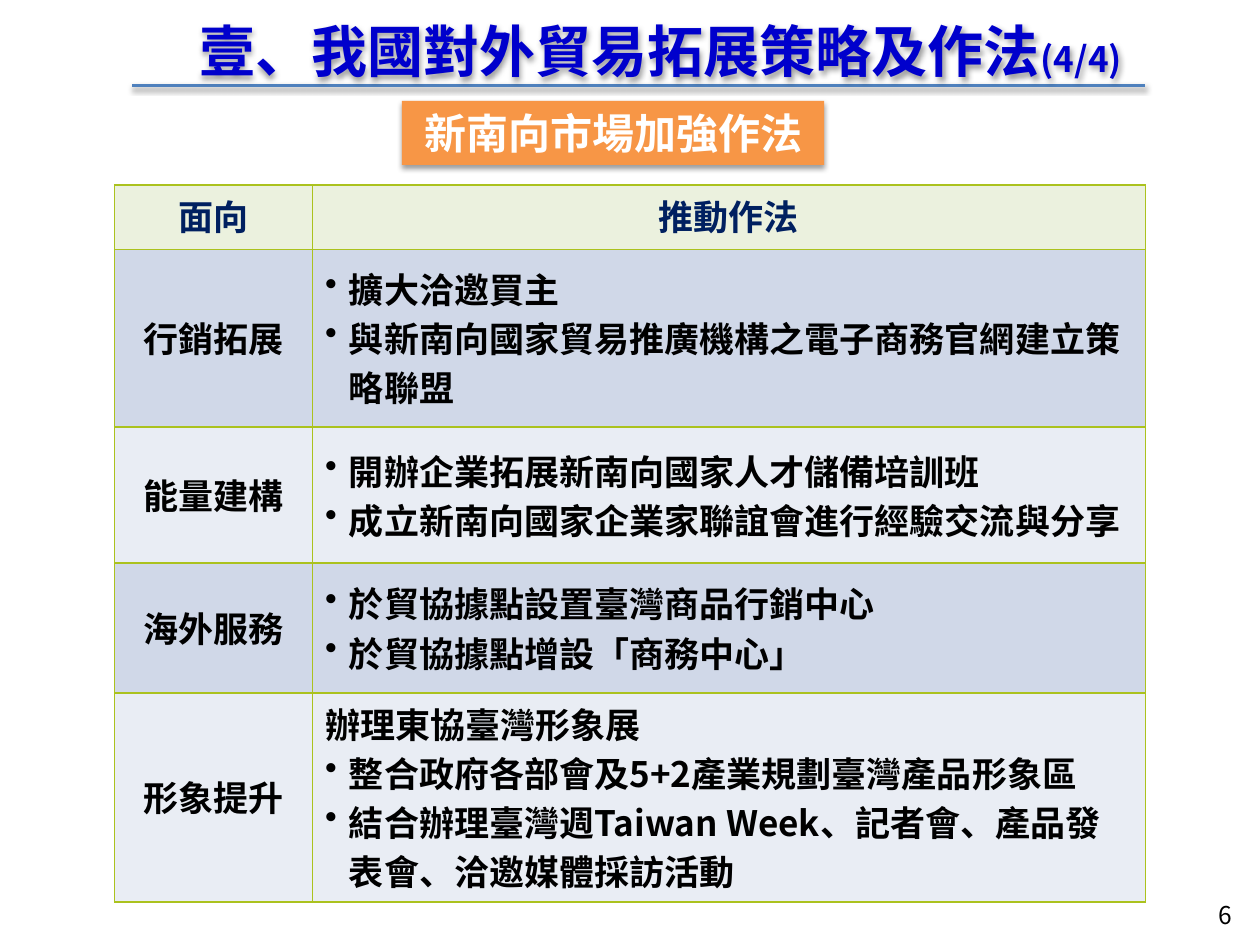
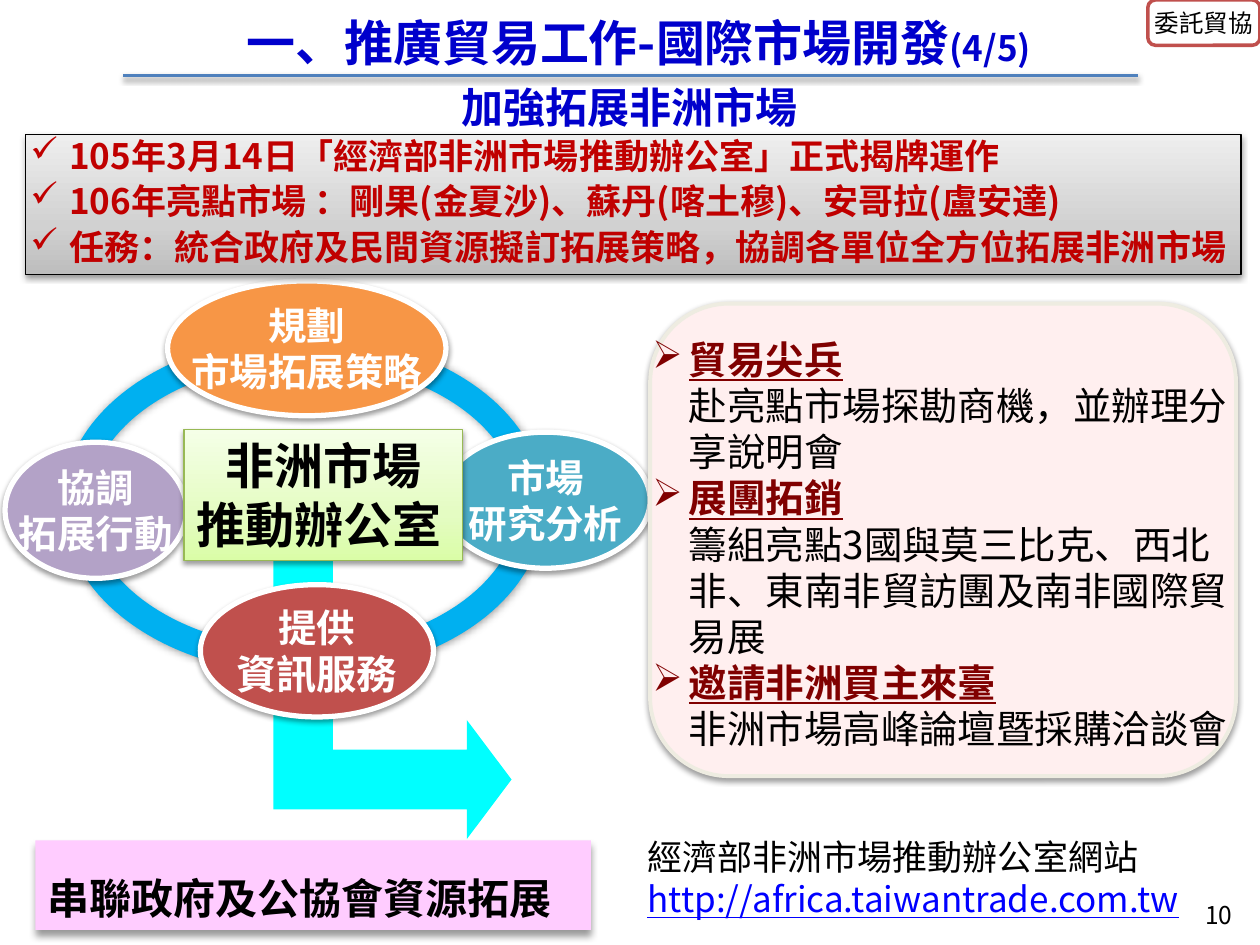
from lxml import etree
from pptx import Presentation
from pptx.dml.color import RGBColor
from pptx.enum import shapes, text
from pptx.oxml import parse_xml
from pptx.oxml.ns import nsdecls, qn
from pptx.util import Inches, Pt

FONT = "Noto Sans CJK SC"
C = dict(
    black="000000", white="FFFFFF", title="0000CC", rule="4F81BD", orange="F79646",
    teal="4BACC6", purple="B3A2C7", red="C0504D", ring="00B0F0", cyan="00FFFF",
    navy="002060", grid="ABC21E", head="EBF1DE", band="D0D8E8", band_light="E9EDF4",
    crimson="C00000", maroon="800000", blush="FFEFEF", cream="EEECE1", pink="FFCCFF",
    green_line="98B955", link="0000FF",
)
GREEN_FADE = [(0, "DAFDA7"), (35, "E4FCC2"), (100, "F5FFE7")]
GREY_FADE = [(0, "BDBDBD"), (35, "D1D1D1"), (100, "EEEEEE")]
# opacity %, blur pt, distance pt
SOFT = (38, 3.1, 1.6)
RULE_SHADOW = (35, 3.1, 1.8)
GLOW = (40, 5, 0)
DEEP = (40, 4, 3)
MS, AL, AN = shapes.MSO_SHAPE, text.PP_ALIGN, text.MSO_ANCHOR


def rgb(name):
    return RGBColor.from_string(C[name])


# ---- shared drawing helpers ----
def set_shadow(spPr, shadow):
    """Give a shape or connector a downward shadow, or none at all."""
    effects = spPr.find(qn("a:effectLst"))
    if effects is None:
        effects = etree.SubElement(spPr, qn("a:effectLst"))
    if shadow:
        alpha, blur, dist = shadow
        effects.append(parse_xml(
            f'<a:outerShdw {nsdecls("a")} blurRad="{Pt(blur)}" dist="{Pt(dist)}" '
            f'dir="5400000" rotWithShape="0"><a:srgbClr val="000000">'
            f'<a:alpha val="{alpha * 1000}"/></a:srgbClr></a:outerShdw>'))


def set_gradient(sp, stops):
    """Fade from the bottom edge to the top edge."""
    marks = "".join(f'<a:gs pos="{pos * 1000}"><a:srgbClr val="{c}"/></a:gs>'
                    for pos, c in stops)
    sp._element.spPr.find(qn("a:prstGeom")).addnext(parse_xml(
        f'<a:gradFill {nsdecls("a")} rotWithShape="1"><a:gsLst>{marks}</a:gsLst>'
        f'<a:lin ang="16200000" scaled="0"/></a:gradFill>'))


def add_box(slide, kind, box, fill=None, line=None, width=1, shadow=None):
    sp = slide.shapes.add_shape(kind, *map(Inches, box))
    sp.shadow.inherit = False
    set_shadow(sp._element.spPr, shadow)
    if isinstance(fill, list):
        set_gradient(sp, fill)
    elif fill:
        sp.fill.solid()
        sp.fill.fore_color.rgb = rgb(fill)
    else:
        sp.fill.background()
    if line:
        sp.line.color.rgb = rgb(line)
        sp.line.width = Pt(width)
    else:
        sp.line.fill.background()
    return sp


def set_frame(tf, anchor=AN.TOP, wrap=True):
    tf.vertical_anchor, tf.word_wrap = anchor, wrap
    return tf


def add_label(slide, box):
    return set_frame(slide.shapes.add_textbox(*map(Inches, box)).text_frame)


def write(tf, words, size=20, color="black", bold=False, underline=False, align=AL.LEFT,
          spacing=None, after=None, bullet=None, indent=0, hang=True):
    """Add one paragraph; words is a string or a list of (string, overrides)."""
    p = tf.paragraphs[0]
    if p.runs:
        p = tf.add_paragraph()
    p.alignment = align
    if spacing:
        p.line_spacing = spacing
    if after:
        p.space_after = Pt(after)
    pPr = p._p.get_or_add_pPr()
    if indent:
        pPr.set("marL", str(Inches(indent)))
        pPr.set("indent", str(-Inches(indent) if hang else 0))
    if bullet:
        etree.SubElement(pPr, qn("a:buChar")).set("char", bullet)
    for piece, own in ([(words, {})] if isinstance(words, str) else words):
        style = dict(size=size, color=color, underline=underline) | own
        r = p.add_run()
        r.text = piece
        r.font.size, r.font.bold = Pt(style["size"]), bold
        r.font.underline = style["underline"]
        r.font.color.rgb = rgb(style["color"])
        r.font.name = FONT
        etree.SubElement(r._r.get_or_add_rPr(), qn("a:ea")).set("typeface", FONT)


def add_rule(slide, x, y, w):
    ln = slide.shapes.add_connector(shapes.MSO_CONNECTOR.STRAIGHT,
                                    *map(Inches, (x, y, x + w, y)))
    ln.line.color.rgb = rgb("rule")
    ln.line.width = Pt(1.75)
    set_shadow(ln._element.spPr, RULE_SHADOW)


def write_title(tf, words, part, size):
    write(tf, [(words, {}), (part, dict(size=20))], size=size, color="title",
          bold=True, align=AL.CENTER)


def new_slide(prs, number):
    slide = prs.slides.add_slide(prs.slide_layouts[6])
    write(add_label(slide, (7.55, 7.09, 2.33, 0.4)), number, size=14, align=AL.RIGHT)
    return slide


# ---- slide 1: measures table ----
MEASURES = [
    ("行銷拓展", 1.41, ["擴大洽邀買主", "與新南向國家貿易推廣機構之電子商務官網建立策略聯盟"]),
    ("能量建構", 1.08, ["開辦企業拓展新南向國家人才儲備培訓班",
                    "成立新南向國家企業家聯誼會進行經驗交流與分享"]),
    ("海外服務", 1.03, ["於貿協據點設置臺灣商品行銷中心", "於貿協據點增設「商務中心」"]),
    ("形象提升", 1.66, ["整合政府各部會及5+2產業規劃臺灣產品形象區",
                    "結合辦理臺灣週Taiwan Week、記者會、產品發表會、洽邀媒體採訪活動"]),
]
LEADS = {"形象提升": "辦理東協臺灣形象展"}


def style_cell(cell, fill, anchor=AN.MIDDLE):
    cell.fill.solid()
    cell.fill.fore_color.rgb = rgb(fill)
    cell.vertical_anchor = anchor
    tcPr = cell._tc.get_or_add_tcPr()
    for i, side in enumerate(("lnL", "lnR", "lnT", "lnB")):
        tcPr.insert(i, parse_xml(
            f'<a:{side} {nsdecls("a")} w="{Pt(1)}"><a:solidFill>'
            f'<a:srgbClr val="{C["grid"]}"/></a:solidFill></a:{side}>'))
    return cell.text_frame


def measures_table(slide, x, y, w, h):
    tbl = slide.shapes.add_table(len(MEASURES) + 1, 2, *map(Inches, (x, y, w, h))).table
    tbl.first_row = tbl.horz_banding = False
    tbl.columns[0].width, tbl.columns[1].width = Inches(1.57), Inches(w - 1.57)
    tbl.rows[0].height = Inches(0.51)
    look = dict(bold=True, spacing=Pt(28))
    for col, heading in enumerate(("面向", "推動作法")):
        write(style_cell(tbl.cell(0, col), "head", AN.TOP), heading,
              color="navy", align=AL.CENTER, **look)
    for row, (aspect, height, actions) in enumerate(MEASURES, 1):
        fill = "band" if row % 2 else "band_light"
        tbl.rows[row].height = Inches(height)
        write(style_cell(tbl.cell(row, 0), fill), aspect, align=AL.CENTER, **look)
        tf = style_cell(tbl.cell(row, 1), fill)
        if aspect in LEADS:
            write(tf, LEADS[aspect], **look)
        for action in actions:
            write(tf, action, bullet="•", indent=0.19, **look)


def southbound_slide(prs):
    slide = new_slide(prs, "6")
    measures_table(slide, 0.91, 1.47, 8.18, 5.69)
    add_rule(slide, 1.05, 0.68, 8.04)
    title = add_box(slide, MS.FLOWCHART_ALTERNATE_PROCESS, (1.15, 0.05, 8.19, 0.69),
                    shadow=SOFT)
    write_title(set_frame(title.text_frame, AN.MIDDLE, False),
                "壹、我國對外貿易拓展策略及作法", "(4/4)", 32)
    banner = add_box(slide, MS.RECTANGLE, (3.19, 0.8, 3.35, 0.51), "orange", shadow=SOFT)
    write(set_frame(banner.text_frame, AN.MIDDLE, False), "新南向市場加強作法",
          size=24, color="white", bold=True, align=AL.CENTER)


# ---- slide 2: Africa office ----
def task_oval(slide, box, fill, lines):
    sp = add_box(slide, MS.OVAL, box, fill, "white", 3, SOFT)
    tf = set_frame(sp.text_frame, AN.MIDDLE, False)
    for line, size in lines:
        write(tf, line, size=size, color="white", bold=True, align=AL.CENTER)


def office_ring(slide, x, y):
    arrow = add_box(slide, MS.BENT_UP_ARROW, (x + 1.96, y + 2.37, 2.23, 1.89), "cyan")
    arrow.rotation = 90
    for i, value in enumerate((0.25, 0.25, 0.188)):
        arrow.adjustments[i] = value
    add_box(slide, MS.OVAL, (x + 0.56, y + 0.54, 3.62, 2.48), None, "ring", 15, GLOW)
    task_oval(slide, (x + 1.29, y, 2.21, 1.07), "orange", [("規劃", 22), ("市場拓展策略", 22)])
    task_oval(slide, (x + 3.46, y + 1.2, 1.66, 1.08), "teal", [("市場", 22), ("研究分析", 22)])
    task_oval(slide, (x, y + 1.28, 1.44, 1.08), "purple", [("協調", 22), ("拓展行動", 22)])
    hub = add_box(slide, MS.RECTANGLE, (x + 1.42, y + 1.18, 2.21, 1.04), GREEN_FADE,
                  "green_line", 0.75, SOFT)
    tf = set_frame(hub.text_frame)
    write(tf, "非洲市場", size=28, bold=True, align=AL.CENTER)
    write(tf, "推動辦公室", size=28, bold=True)
    task_oval(slide, (x + 1.55, y + 2.41, 1.85, 1.05), "red", [("提供", 22), ("資訊服務", 23)])


def highlights(slide, x, y, w, h):
    sp = add_box(slide, MS.RECTANGLE, (x, y, w, h), GREY_FADE, "black", 0.75, SOFT)
    tf = set_frame(sp.text_frame)
    tf.margin_left = tf.margin_right = Inches(0.04)
    for line in ("105年3月14日「經濟部非洲市場推動辦公室」正式揭牌運作",
                 "106年亮點市場 ：剛果(金夏沙)、蘇丹(喀土穆)、安哥拉(盧安達)",
                 "任務：統合政府及民間資源擬訂拓展策略，協調各單位全方位拓展非洲市場"):
        write(tf, line, color="crimson", bold=True, spacing=Pt(20), after=6,
              bullet="✓", indent=0.31)


def action_panel(slide, x, y, w, h):
    add_box(slide, MS.ROUNDED_RECTANGLE, (x, y, w, h), "blush", "cream", 2.25, SOFT)
    tf = add_label(slide, (x - 0.08, y + 0.19, w + 0.19, h - 0.32))
    tf.vertical_anchor = AN.MIDDLE
    for heading, detail in (
            ("貿易尖兵", "赴亮點市場探勘商機，並辦理分享說明會"),
            ("展團拓銷", "籌組亮點3國與莫三比克、西北非、東南非貿訪團及南非國際貿易展"),
            ("邀請非洲買主來臺", "非洲市場高峰論壇暨採購洽談會")):
        write(tf, heading, size=22, color="maroon", bold=True, underline=True,
              bullet="➢", indent=0.29)
        write(tf, detail, size=22, indent=0.29, hang=False)


def bottom_row(slide, x, y):
    sp = add_box(slide, MS.RECTANGLE, (x, y, 4.41, 0.71), "pink", shadow=DEEP)
    write(set_frame(sp.text_frame, AN.MIDDLE), "串聯政府及公協會資源拓展",
          size=24, bold=True, spacing=1.5)
    write(add_label(slide, (x + 4.76, y - 0.09, 4.96, 0.77)),
          [("經濟部非洲市場推動辦公室網站 ", {}),
           ("http://africa.taiwantrade.com.tw", dict(color="link", underline=True))])


def africa_slide(prs):
    slide = new_slide(prs, "10")
    office_ring(slide, 0.04, 2.23)
    highlights(slide, 0.2, 1.07, 9.65, 1.11)
    action_panel(slide, 5.16, 2.41, 4.65, 3.75)
    bottom_row(slide, 0.28, 6.67)
    write(add_label(slide, (0.98, 0.6, 8.03, 0.5)), "加強拓展非洲市場",
          size=24, color="title", bold=True, align=AL.CENTER)
    tag = add_box(slide, MS.FLOWCHART_ALTERNATE_PROCESS, (9.11, 0, 0.89, 0.36),
                  "white", "red", 2)
    write(set_frame(tag.text_frame, wrap=False), "委託貿協", size=14,
          align=AL.CENTER, after=12)
    write_title(add_label(slide, (1.2, 0.05, 7.74, 0.57)),
                "一、推廣貿易工作-國際市場開發", "(4/5)", 28)
    add_rule(slide, 0.98, 0.6, 8.05)


def main():
    prs = Presentation()
    prs.slide_width, prs.slide_height = Inches(10), Inches(7.5)
    southbound_slide(prs)
    africa_slide(prs)
    prs.save("out.pptx")


if __name__ == "__main__":
    main()
